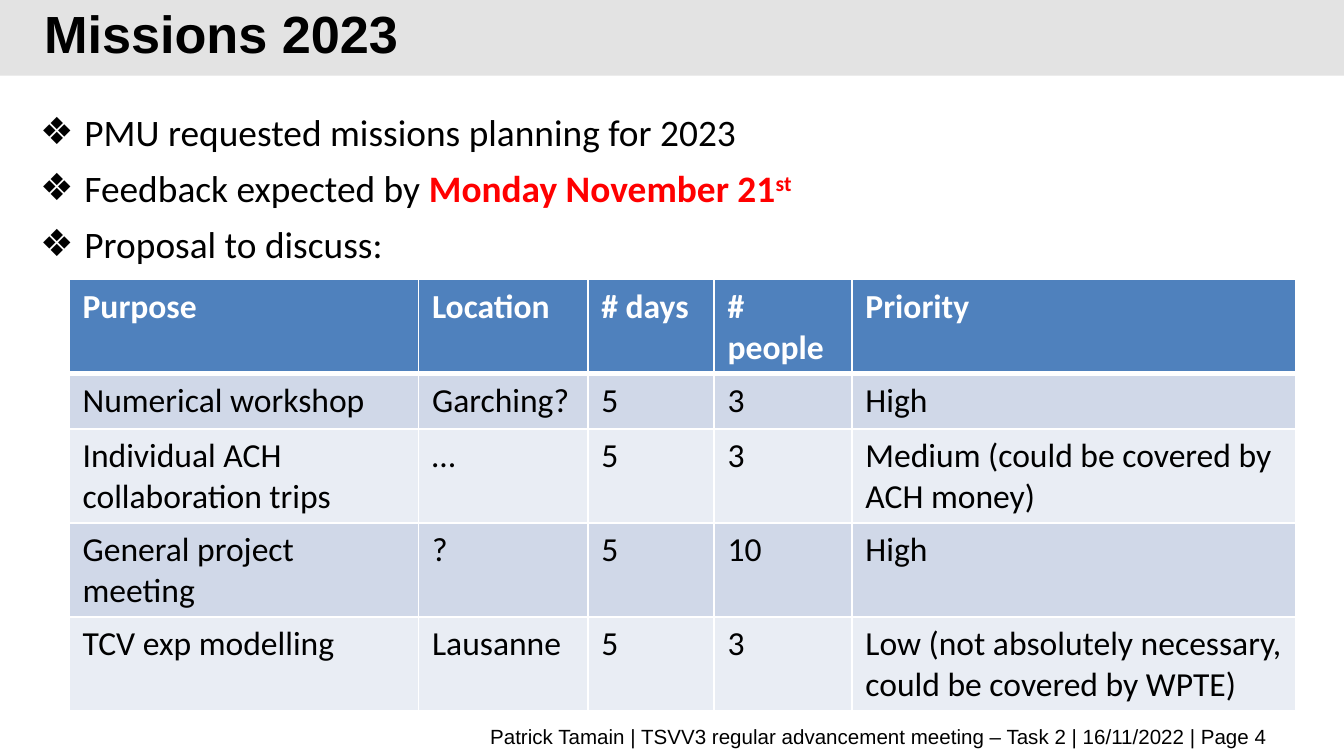
import dataclasses

import pptx
import pptx.dml.color
import pptx.enum.shapes
import pptx.enum.text
import pptx.oxml.ns
import pptx.util
from lxml import etree

qn = pptx.oxml.ns.qn
Align = pptx.enum.text.PP_ALIGN
Anchor = pptx.enum.text.MSO_ANCHOR


@dataclasses.dataclass(frozen=True)
class Theme:
    black: str = "000000"
    white: str = "FFFFFF"
    red: str = "FF0000"
    band: str = "E3E3E3"
    head: str = "4F81BD"
    rows: tuple = ("D0D8E8", "E9EDF4")
    sans: str = "Arial"
    body: str = "Calibri"
    title: int = 28
    text: int = 20
    cell: int = 18
    foot: int = 11


class Page:
    """One slide on a grid of 100 columns; cells are square."""

    def __init__(self, deck, theme):
        self.theme = theme
        self.unit = deck.slide_width / 100
        self.slide = deck.slides.add_slide(deck.slide_layouts[6])

    def span(self, *cells):
        return [pptx.util.Emu(round(n * self.unit)) for n in cells]

    def style(self, run, size, face, color, bold=False):
        font = run.font
        font.size = pptx.util.Pt(size)
        font.name = face
        font.bold = bold
        font.color.rgb = pptx.dml.color.RGBColor.from_string(color)

    def paint(self, fill, color):
        fill.solid()
        fill.fore_color.rgb = pptx.dml.color.RGBColor.from_string(color)

    def bar(self, at, color):
        kind = pptx.enum.shapes.MSO_SHAPE.RECTANGLE
        shape = self.slide.shapes.add_shape(kind, *self.span(*at))
        shape.shadow.inherit = False
        self.paint(shape.fill, color)
        shape.line.fill.background()

    def box(self, at, anchor=Anchor.TOP):
        frame = self.slide.shapes.add_textbox(*self.span(*at)).text_frame
        frame.word_wrap = True
        frame.vertical_anchor = anchor
        return frame

    def line(self, at, text, size, bold=False, align=Align.LEFT, lead=None):
        frame = self.box(at, Anchor.MIDDLE)
        frame.text = text
        para = frame.paragraphs[0]
        para.alignment = align
        if lead:
            para.line_spacing = pptx.util.Pt(lead)
        self.style(para.runs[0], size, self.theme.sans, self.theme.black, bold)

    def bullets(self, at, items):
        """Each item is a list of (text, color, bold, raised) parts."""
        frame = self.box(at)
        left, hang = self.span(3.3, -3.8)
        for i, parts in enumerate(items):
            para = frame.add_paragraph() if i else frame.paragraphs[0]
            props = para._p.get_or_add_pPr()
            props.set("marL", str(left))
            props.set("indent", str(hang))
            color = etree.SubElement(props, qn("a:buClr"))
            etree.SubElement(color, qn("a:srgbClr"), val=self.theme.black)
            etree.SubElement(props, qn("a:buFont"), typeface=self.theme.sans)
            etree.SubElement(props, qn("a:buChar"), char="❖")
            if i:
                para.space_before = pptx.util.Pt(6)
            for text, ink, bold, raised in parts:
                run = para.add_run()
                run.text = text
                self.style(run, self.theme.text, self.theme.body, ink, bold)
                if raised:
                    run.font._element.set("baseline", "30000")

    def edges(self, cell, **widths):
        props = cell._tc.get_or_add_tcPr()
        for side in "LRTB":
            width = pptx.util.Pt(widths.get(side, 1))
            edge = etree.SubElement(props, qn("a:ln" + side), w=str(width))
            fill = etree.SubElement(edge, qn("a:solidFill"))
            etree.SubElement(fill, qn("a:srgbClr"), val=self.theme.white)

    def table(self, at, cols, high, data):
        t = self.theme
        frame = self.slide.shapes.add_table(len(data), len(cols), *self.span(*at))
        grid = frame.table
        for col, width in zip(grid.columns, self.span(*cols)):
            col.width = width
        for r, texts in enumerate(data):
            grid.rows[r].height = self.span(high)[0]
            back = t.rows[(r - 1) % 2] if r else t.head
            ink = t.black if r else t.white
            rule = {0: {"B": 3}, 1: {"T": 3}}.get(r, {})
            for c, text in enumerate(texts):
                cell = grid.cell(r, c)
                self.edges(cell, **rule)
                self.paint(cell.fill, back)
                cell.text_frame.text = text
                run = cell.text_frame.paragraphs[0].runs[0]
                self.style(run, t.cell, t.body, ink, r == 0)
        # The frame is taller than its rows, as wrapped text makes them grow
        frame.height = self.span(at[3])[0]


def main():
    deck = pptx.Presentation()
    deck.slide_width = pptx.util.Inches(10)
    deck.slide_height = deck.slide_width * 9 // 16
    t = Theme()
    page = Page(deck, t)

    # Title band
    page.bar((0, 0, 100, 5.63), t.band)
    page.line((2.3, 0.65, 86.3, 3.8), "Missions 2023", t.title, bold=True, lead=32)

    # Footer
    page.line((5.2, 53.7, 90.1, 2.2),
              "Patrick Tamain | TSVV3 regular advancement meeting – Task 2"
              " | 16/11/2022 | Page 4", t.foot, align=Align.RIGHT)

    # Key points
    page.bullets((2, 7.65, 96.1, 44.3), [
        [("PMU requested missions planning for 2023", t.black, False, False)],
        [("Feedback expected by ", t.black, False, False),
         ("Monday November 21", t.red, True, False),
         ("st", t.red, True, True)],
        [("Proposal to discuss:", t.black, False, False)],
    ])

    # Missions table
    page.table((5.15, 20.8, 91.3, 32.1), (26, 12.6, 9.4, 10.25, 33.05), 4.1, [
        ("Purpose", "Location", "# days", "# people", "Priority"),
        ("Numerical workshop", "Garching?", "5", "3", "High"),
        ("Individual ACH collaboration trips", "…", "5", "3",
         "Medium (could be covered by ACH money)"),
        ("General project meeting", "?", "5", "10", "High"),
        ("TCV exp modelling", "Lausanne", "5", "3",
         "Low (not absolutely necessary, could be covered by WPTE)"),
    ])

    deck.save("out.pptx")


if __name__ == "__main__":
    main()
